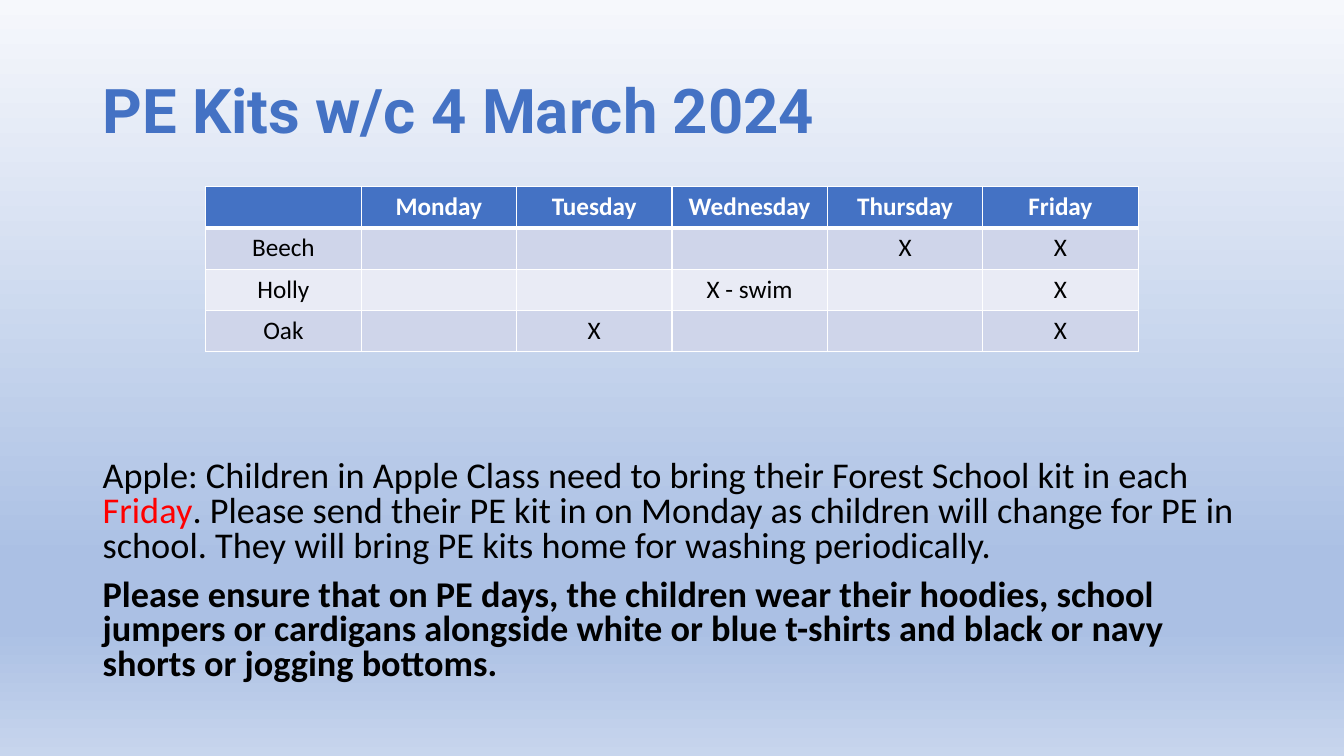
"""Build the weekly PE kit slide."""
import copy
import pptx
import pptx.dml.color
import pptx.enum.text
import pptx.oxml
import pptx.oxml.ns
import pptx.util

Inches, Pt = pptx.util.Inches, pptx.util.Pt
Color = pptx.dml.color.RGBColor
qn = pptx.oxml.ns.qn

BLUE = Color(0x44, 0x72, 0xC4)
WHITE = Color(0xFF, 0xFF, 0xFF)
BLACK = Color(0, 0, 0)
RED = Color(0xFF, 0, 0)
BANDS = [Color(0xCF, 0xD5, 0xEA), Color(0xE9, 0xEB, 0xF5)]
STOPS = [(0, "F6F8FC"), (74, "ABC0E4"), (83, "ABC0E4"), (100, "C7D5ED")]

TITLE = [[("PE Kits w/c 4 March 2024", BLUE, True)]]
ROWS = [
    ["", "Monday", "Tuesday", "Wednesday", "Thursday", "Friday"],
    ["Beech", "", "", "", "X", "X"],
    ["Holly", "", "", "X - swim", "", "X"],
    ["Oak", "", "X", "", "", "X"],
]
NOTES = [
    [
        ("Apple: Children in Apple Class need to bring their Forest School kit in each ", BLACK, False),
        ("Friday", RED, False),
        (". Please send their PE kit in on Monday as children will change for PE in school. "
         "They will bring PE kits home for washing periodically.", BLACK, False),
    ],
    [
        ("Please ensure that on PE days, the children wear their hoodies, school jumpers or "
         "cardigans alongside white or blue t-shirts and black or navy shorts or jogging bottoms.",
         BLACK, True),
    ],
]


def add_run(para, text, font, size, color, bold):
    run = para.add_run()
    run.text = text
    run.font.name = font
    run.font.size = Pt(size)
    run.font.color.rgb = color
    run.font.bold = bold


def add_text(slide, top, height, paras, font, size, lead, gap):
    box = slide.shapes.add_textbox(Inches(0.92), Inches(top), Inches(11.5), Inches(height))
    frame = box.text_frame
    frame.word_wrap = True
    for i, runs in enumerate(paras):
        para = frame.add_paragraph() if i else frame.paragraphs[0]
        para.line_spacing = lead
        para.space_before = Pt(gap if i else 0)
        for text, color, bold in runs:
            add_run(para, text, font, size, color, bold)
    return frame


def add_edges(cell, head):
    props = cell._tc.get_or_add_tcPr()
    for i, side in enumerate("LRTB"):
        width = 3 if (head and side == "B") else 1
        line = pptx.oxml.parse_xml(
            f'<a:ln{side} {pptx.oxml.ns.nsdecls("a")} w="{Pt(width)}">'
            f'<a:solidFill><a:srgbClr val="{WHITE}"/></a:solidFill></a:ln{side}>')
        props.insert(i, line)


def add_grid(slide):
    cols = len(ROWS[0])
    shape = slide.shapes.add_table(
        len(ROWS), cols, Inches(2.04), Inches(1.85), Inches(9.25), Inches(1.64))
    grid = shape.table
    for r, row in enumerate(ROWS):
        head = r == 0
        for c, text in enumerate(row):
            cell = grid.cell(r, c)
            cell.fill.solid()
            cell.fill.fore_color.rgb = BLUE if head else BANDS[(r - 1) % 2]
            para = cell.text_frame.paragraphs[0]
            para.alignment = pptx.enum.text.PP_ALIGN.CENTER
            if text:
                add_run(para, text, "Calibri", 18, WHITE if head else BLACK, head)
            add_edges(cell, head)


def set_back(slide):
    fill = slide.background.fill
    fill.gradient()
    fill.gradient_angle = 270
    stops = next(slide.element.iter(qn("a:gsLst")))
    base = copy.deepcopy(stops[0])
    for stop in list(stops):
        stops.remove(stop)
    for _ in STOPS:
        stops.append(copy.deepcopy(base))
    for stop, (pos, color) in zip(fill.gradient_stops, STOPS):
        stop.position = pos / 100
        stop.color.rgb = Color.from_string(color)


def main():
    deck = pptx.Presentation()
    deck.slide_width, deck.slide_height = Inches(13.33), Inches(7.5)
    slide = deck.slides.add_slide(deck.slide_layouts[6])
    set_back(slide)
    notes = add_text(slide, 2, 4.76, NOTES, "Calibri", 25.9, 0.8, 10)
    notes.margin_top = Inches(2.57)
    title = add_text(slide, 0.4, 1.45, TITLE, "Roboto", 44, 0.9, 0)
    title.vertical_anchor = pptx.enum.text.MSO_ANCHOR.MIDDLE
    add_grid(slide)
    deck.save("out.pptx")


if __name__ == "__main__":
    main()
